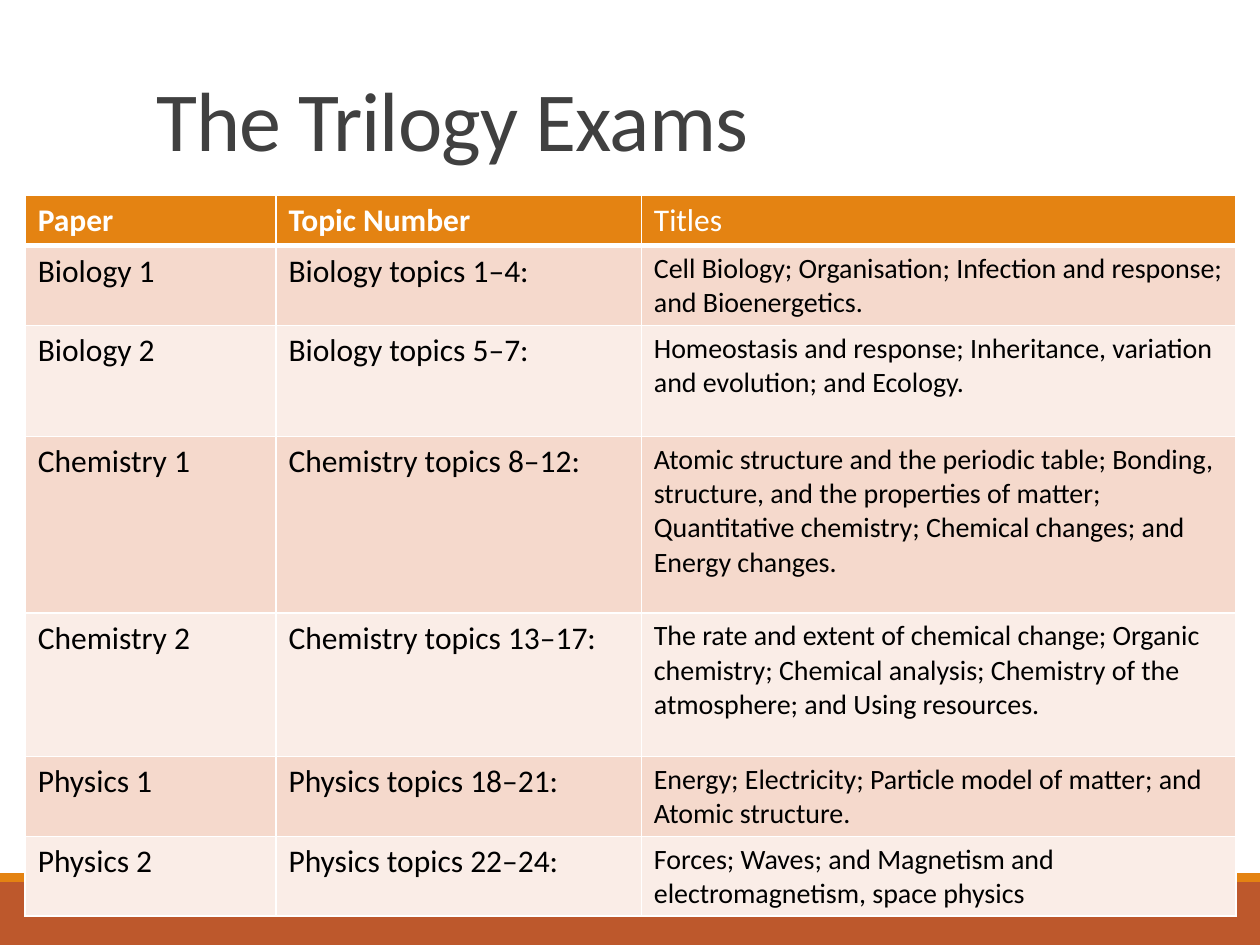
from lxml.etree import SubElement
from pptx import Presentation
from pptx.dml.color import RGBColor
from pptx.enum.shapes import MSO_SHAPE
from pptx.enum.text import MSO_ANCHOR
from pptx.oxml.ns import qn
from pptx.util import Inches, Pt

COLORS = {
    "orange": "E48312",
    "rust": "BD582C",
    "title": "404040",
    "white": "FFFFFF",
    "black": "000000",
    "band_dark": "F5D9CC",
    "band_light": "FAEDE7",
}
FONT = "Calibri"
COLUMN_WIDTHS = [1.99, 2.9, 4.72]
ROW_HEIGHTS = [0.36, 0.61, 0.88, 1.4, 1.14, 0.61, 0.61]
ROWS = [
    ("Paper", "Topic Number", "Titles"),
    ("Biology 1", "Biology topics 1–4:",
     "Cell Biology; Organisation; Infection and response; and Bioenergetics."),
    ("Biology 2", "Biology topics 5–7:",
     "Homeostasis and response; Inheritance, variation and evolution; and Ecology."),
    ("Chemistry 1", "Chemistry topics 8–12:",
     "Atomic structure and the periodic table; Bonding, structure, and the properties "
     "of matter; Quantitative chemistry; Chemical changes; and Energy changes."),
    ("Chemistry 2", "Chemistry topics 13–17:",
     "The rate and extent of chemical change; Organic chemistry; Chemical analysis; "
     "Chemistry of the atmosphere; and Using resources."),
    ("Physics 1", "Physics topics 18–21:",
     "Energy; Electricity; Particle model of matter; and Atomic structure."),
    ("Physics 2", "Physics topics 22–24:",
     "Forces; Waves; and Magnetism and electromagnetism, space physics"),
]


def add_run(paragraph, text, size, color, bold=False):
    run = paragraph.add_run()
    run.text = text
    run.font.name = FONT
    run.font.size = Pt(size)
    run.font.bold = bold
    run.font.color.rgb = RGBColor.from_string(COLORS[color])
    return run


def set_borders(cell, widths):
    """Draw white cell borders; widths maps each side's tag to points."""
    properties = cell._tc.get_or_add_tcPr()
    for tag, width in widths.items():
        line = SubElement(properties, qn(tag), w=str(Pt(width)))
        fill = SubElement(line, qn("a:solidFill"))
        SubElement(fill, qn("a:srgbClr"), val=COLORS["white"])


presentation = Presentation()
presentation.slide_width = Inches(10)
presentation.slide_height = Inches(7.5)
slide = presentation.slides.add_slide(presentation.slide_layouts[6])

# Footer bands
for top, height, color in [(7, 0.5, "rust"), (6.93, 0.07, "orange")]:
    band = slide.shapes.add_shape(
        MSO_SHAPE.RECTANGLE, 0, Inches(top), presentation.slide_width, Inches(height))
    band.shadow.inherit = False
    band.fill.solid()
    band.fill.fore_color.rgb = RGBColor.from_string(COLORS[color])
    band.line.fill.background()

# Title
title = slide.shapes.add_textbox(Inches(1.14), Inches(0.52), Inches(7.68), Inches(0.87))
title.text_frame.word_wrap = True
title.text_frame.vertical_anchor = MSO_ANCHOR.BOTTOM
title_paragraph = title.text_frame.paragraphs[0]
title_paragraph.line_spacing = 0.85
title_run = add_run(title_paragraph, "The Trilogy Exams", 48, "title")
title_run.font._element.set("spc", "-50")

# Exam table
table = slide.shapes.add_table(
    len(ROWS), len(COLUMN_WIDTHS), Inches(0.2), Inches(1.55),
    Inches(sum(COLUMN_WIDTHS)), Inches(sum(ROW_HEIGHTS))).table
for column, width in zip(table.columns, COLUMN_WIDTHS):
    column.width = Inches(width)
for row, height in zip(table.rows, ROW_HEIGHTS):
    row.height = Inches(height)

for row_index, texts in enumerate(ROWS):
    is_header = row_index == 0
    band_color = "band_dark" if row_index % 2 else "band_light"
    for column_index, text in enumerate(texts):
        is_titles = column_index == 2
        cell = table.cell(row_index, column_index)
        set_borders(cell, {"a:lnL": 1, "a:lnR": 1,
                           "a:lnT": 3 if row_index == 1 else 1,
                           "a:lnB": 3 if is_header else 1})
        cell.fill.solid()
        cell.fill.fore_color.rgb = RGBColor.from_string(
            COLORS["orange" if is_header else band_color])
        add_run(cell.text_frame.paragraphs[0], text,
                size=16 if is_titles and not is_header else 18,
                color="white" if is_header else "black",
                bold=is_header and not is_titles)

presentation.save("out.pptx")
